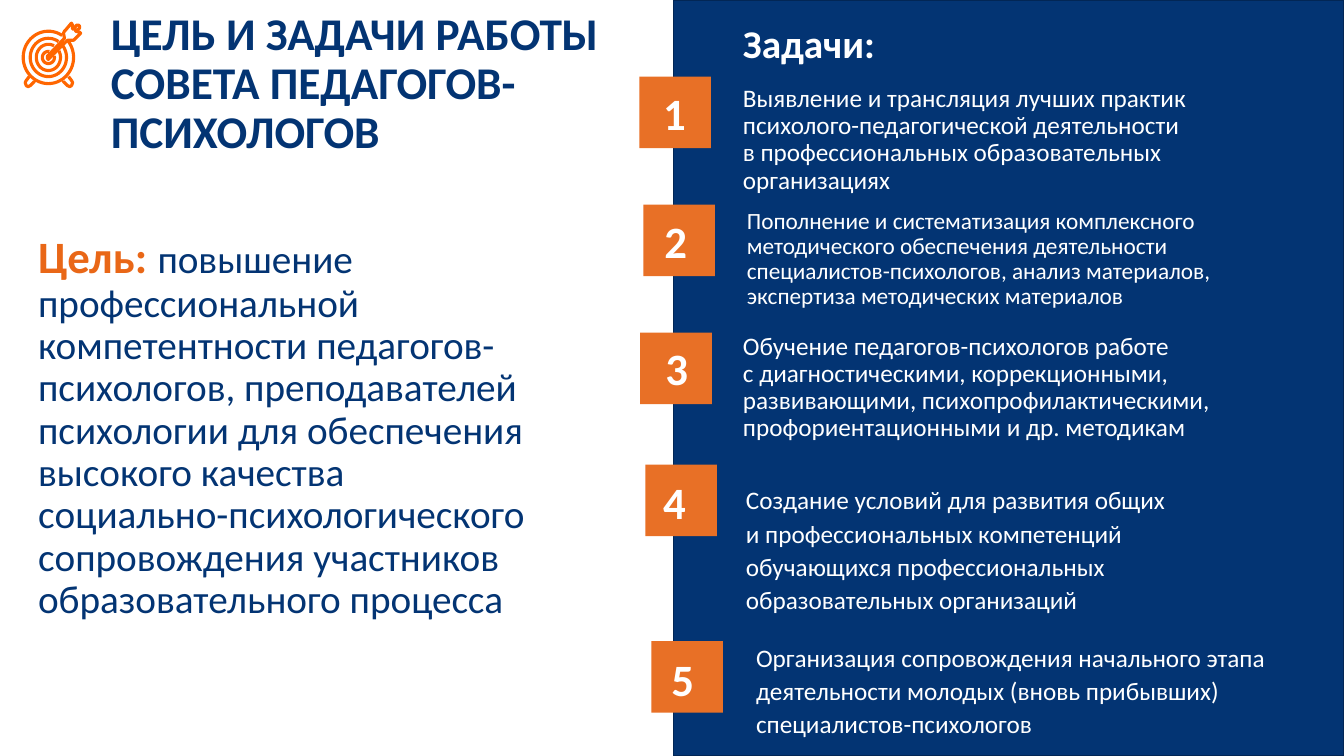
from math import cos, radians, sin

from pptx import Presentation
from pptx.dml.color import RGBColor
from pptx.enum.shapes import MSO_SHAPE
from pptx.enum.text import MSO_ANCHOR
from pptx.util import Inches, Pt

COLORS = {
    "navy": "033473",
    "navy_edge": "022655",
    "orange": "E87026",
    "goal": "E96717",
    "icon": "FF6600",
    "white": "FFFFFF",
}
FONT = "Calibri"
SQUARE = 0.71

# Square corner, digit corner, text box, size, line spacing, paragraphs
TASKS = [
    ((6.34, 0.76), (6.48, 0.8), (7.27, 0.8, 5.94, 1.06), 18, 0.9, [
        "Выявление и трансляция лучших практик",
        "психолого-педагогической деятельности",
        "в профессиональных образовательных",
        "организациях"]),
    ((6.38, 2.03), (6.49, 2.07), (7.31, 2.03, 5.4, 1.13), 16.6, 0.9, [
        "Пополнение и систематизация комплексного методического обеспечения "
        "деятельности специалистов-психологов, анализ материалов, "
        "экспертиза методических материалов"]),
    ((6.35, 3.3), (6.5, 3.33), (7.27, 3.26, 5.71, 1.47), 18, 0.9, [
        "Обучение педагогов-психологов работе",
        "с диагностическими, коррекционными, развивающими, "
        "психопрофилактическими, профориентационными и др. методикам"]),
    ((6.4, 4.61), (6.48, 4.66), (7.3, 4.73, 5.41, 0.74), 18, 1.1, [
        "Создание условий для развития общих",
        "и профессиональных компетенций обучающихся профессиональных "
        "образовательных организаций"]),
    ((6.46, 6.36), (6.56, 6.42), (7.4, 6.29, 5.81, 1.1), 18, 1.1, [
        "Организация сопровождения начального этапа деятельности молодых "
        "(вновь прибывших) специалистов-психологов"]),
]

# Radius across, radius down, and the angles where the ring opens for the dart
RINGS = [
    (0.25, 0.26, 38, 57),
    (0.18, 0.19, 37, 56),
    (0.12, 0.13, 30, 62),
    (0.06, 0.06, 14, 80),
]
FOOT = [(0.06, 0.53), (0.03, 0.57), (0.02, 0.59), (0.03, 0.62),
        (0.05, 0.63), (0.07, 0.62), (0.11, 0.58), (0.11, 0.57)]
DART = [(0.56, 0.09), (0.52, 0.08), (0.56, 0.05), (0.56, 0.03), (0.55, 0.02),
        (0.53, 0.02), (0.5, 0.06), (0.49, 0.06), (0.49, 0.02), (0.48, 0),
        (0.47, 0.01), (0.42, 0.07), (0.41, 0.08), (0.4, 0.1), (0.41, 0.15),
        (0.24, 0.33), (0.24, 0.35), (0.25, 0.36), (0.26, 0.35), (0.44, 0.17),
        (0.48, 0.17), (0.5, 0.17), (0.51, 0.16), (0.56, 0.11), (0.57, 0.1)]


def rgb(name):
    return RGBColor.from_string(COLORS[name])


def add_rect(s, box, fill, edge=None):
    sp = s.shapes.add_shape(MSO_SHAPE.RECTANGLE, *map(Inches, box))
    sp.shadow.inherit = False
    sp.fill.solid()
    sp.fill.fore_color.rgb = rgb(fill)
    if edge:
        sp.line.color.rgb = rgb(edge)
        sp.line.width = Pt(1)
    else:
        sp.line.fill.background()


def add_text(s, box, paragraphs, spacing=1.0, anchor=MSO_ANCHOR.TOP, wrap=True):
    """Each paragraph is a list of (text, size, color, bold) runs."""
    tf = s.shapes.add_textbox(*map(Inches, box)).text_frame
    tf.word_wrap = wrap
    tf.vertical_anchor = anchor
    for i, runs in enumerate(paragraphs):
        p = tf.add_paragraph() if i else tf.paragraphs[0]
        p.line_spacing = spacing
        for text, size, color, bold in runs:
            r = p.add_run()
            r.text = text
            r.font.name = FONT
            r.font.size = Pt(size)
            r.font.bold = bold
            r.font.color.rgb = rgb(color)


def add_outline(group, left, top, points, close=False):
    pts = [(Inches(left + x), Inches(top + y)) for x, y in points]
    builder = group.shapes.build_freeform(*pts[0])
    builder.add_line_segments(pts[1:], close=close)
    sp = builder.convert_to_shape()
    sp.shadow.inherit = False
    sp.fill.background()
    sp.line.color.rgb = rgb("icon")
    sp.line.width = Pt(2.25)


def ring_points(rx, ry, start, end, steps=48):
    """Points of an ellipse that stays open between the angles start and end."""
    sweep = 360 - (end - start)
    angles = [radians(end + sweep * i / steps) for i in range(steps + 1)]
    return [(0.25 + rx * cos(a), 0.34 - ry * sin(a)) for a in angles]


def draw_target(s, left, top):
    group = s.shapes.add_group_shape()
    for ring in RINGS:
        add_outline(group, left, top, ring_points(*ring))
    add_outline(group, left, top, FOOT)
    add_outline(group, left, top, [(0.51 - x, y) for x, y in FOOT])
    add_outline(group, left, top, DART, close=True)


def draw_goal(s, left, top):
    draw_target(s, left + 0.23, top + 0.23)
    add_text(s, (left + 1, top, 5.92, 1.68),
             [[("ЦЕЛЬ И ЗАДАЧИ РАБОТЫ СОВЕТА ПЕДАГОГОВ-ПСИХОЛОГОВ",
                32.4, "navy", True)]], 0.9, MSO_ANCHOR.MIDDLE)
    add_text(s, (left + 0.28, top + 2.28, 5.4, 4.92), [
        [("Цель: ", 32, "goal", True),
         ("повышение профессиональной компетентности педагогов-психологов, "
          "преподавателей психологии для обеспечения высокого качества",
          28, "navy", False)],
        [("социально-психологического сопровождения участников "
          "образовательного процесса", 28, "navy", False)],
    ], 0.9)


def draw_tasks(s, left, top, width, height):
    add_rect(s, (left, top, width, height), "navy", "navy_edge")
    add_text(s, (left + 0.59, top + 0.2, 3.43, 0.54),
             [[("Задачи:", 28, "white", True)]], 0.9)
    for number, task in enumerate(TASKS, 1):
        square, digit, box, size, spacing, paragraphs = task
        add_rect(s, (*square, SQUARE, SQUARE), "orange")
        add_text(s, (*digit, 0.43, 0.64),
                 [[(str(number), 32, "white", True)]], wrap=False)
        add_text(s, box, [[(text, size, "white", False)] for text in paragraphs],
                 spacing)


def main():
    prs = Presentation()
    prs.slide_width, prs.slide_height = Inches(13.33), Inches(7.5)
    s = prs.slides.add_slide(prs.slide_layouts[6])
    draw_tasks(s, 6.68, 0, 6.65, 7.5)
    draw_goal(s, 0, 0)
    prs.save("out.pptx")


if __name__ == "__main__":
    main()
